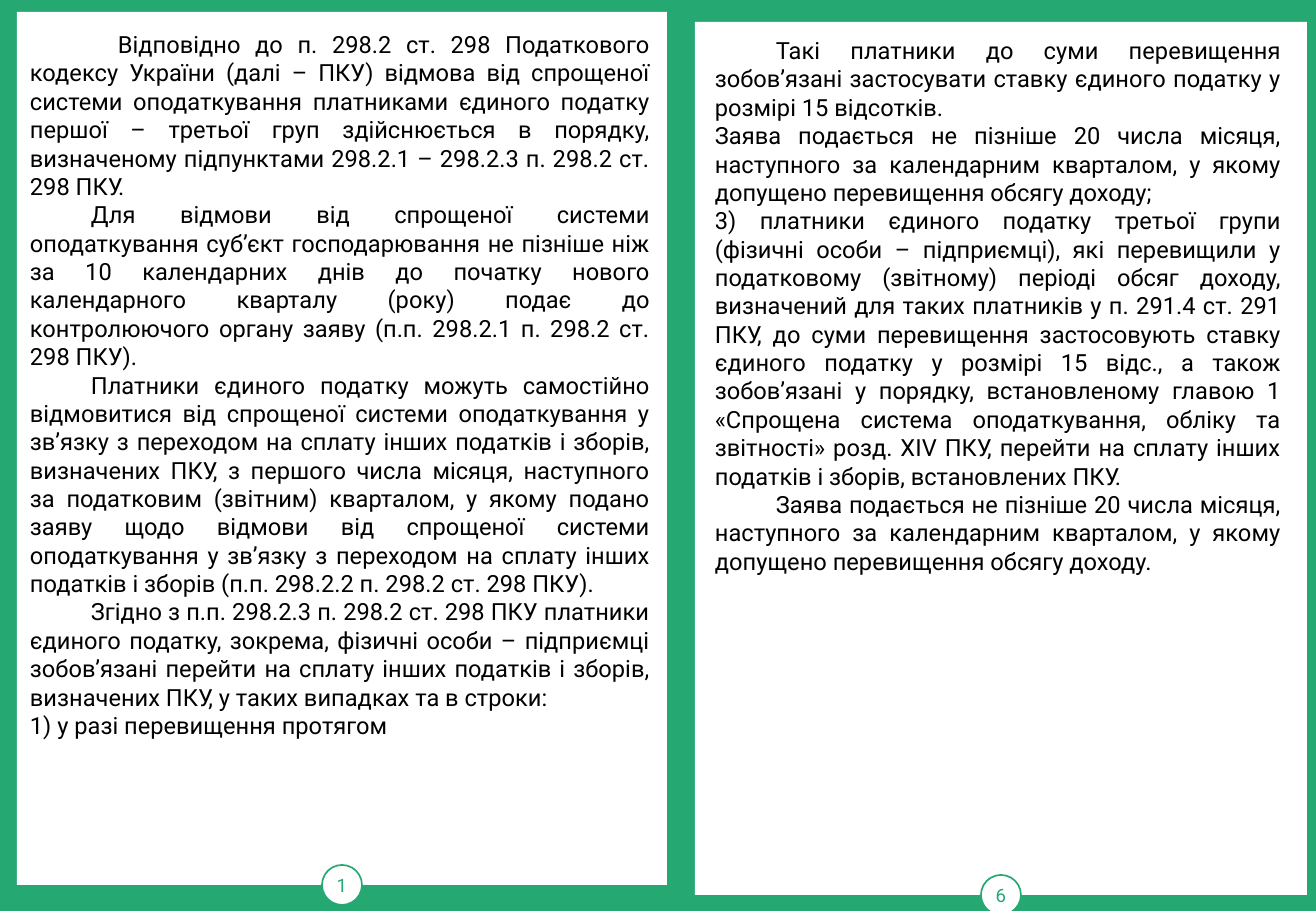
from pptx import Presentation
from pptx.dml.color import RGBColor
from pptx.enum.shapes import MSO_SHAPE
from pptx.enum.text import MSO_ANCHOR, PP_ALIGN
from pptx.util import Pt

EMU_PER_PX = 914400 / 121.5
GREEN = RGBColor(0x25, 0xA8, 0x72)
WHITE = RGBColor(0xFF, 0xFF, 0xFF)
BLACK = RGBColor(0x00, 0x00, 0x00)
RECTANGLE = MSO_SHAPE.RECTANGLE
OVAL = MSO_SHAPE.OVAL
MIDDLE = MSO_ANCHOR.MIDDLE
CENTER = PP_ALIGN.CENTER
JUSTIFY = PP_ALIGN.JUSTIFY

BADGE_SIZE = 40
FIRST_INDENT = 88
INDENT = 61

# Each paragraph is a first-line indent in px and its wording
REFUSAL_RULES = [
    (FIRST_INDENT, "Відповідно до п. 298.2 ст. 298 Податкового кодексу України (далі – ПКУ) "
     "відмова від спрощеної системи оподаткування платниками єдиного податку першої – третьої "
     "груп здійснюється в порядку, визначеному підпунктами 298.2.1 – 298.2.3 п. 298.2 ст. 298 ПКУ."),
    (INDENT, "Для відмови від спрощеної системи оподаткування суб’єкт господарювання не пізніше "
     "ніж за 10 календарних днів до початку нового календарного кварталу (року) подає до "
     "контролюючого органу заяву (п.п. 298.2.1 п. 298.2 ст. 298 ПКУ)."),
    (INDENT, "Платники єдиного податку можуть самостійно відмовитися від спрощеної системи "
     "оподаткування у зв’язку з переходом на сплату інших податків і зборів, визначених ПКУ, "
     "з першого числа місяця, наступного за податковим (звітним) кварталом, у якому подано заяву "
     "щодо відмови від спрощеної системи оподаткування у зв’язку з переходом на сплату інших "
     "податків і зборів (п.п. 298.2.2 п. 298.2 ст. 298 ПКУ)."),
    (INDENT, "Згідно з п.п. 298.2.3 п. 298.2 ст. 298 ПКУ платники єдиного податку, зокрема, "
     "фізичні особи – підприємці зобов’язані перейти на сплату інших податків і зборів, "
     "визначених ПКУ, у таких випадках та в строки:"),
    (0, "1) у разі перевищення протягом"),
]
EXCESS_RULES = [
    (INDENT, "Такі платники до суми перевищення зобов’язані застосувати ставку єдиного податку "
     "у розмірі 15 відсотків."),
    (0, "Заява подається не пізніше 20 числа місяця, наступного за календарним кварталом, "
     "у якому допущено перевищення обсягу доходу;"),
    (0, "3) платники єдиного податку третьої групи (фізичні особи – підприємці), які перевищили "
     "у податковому (звітному) періоді обсяг доходу, визначений для таких платників у п. 291.4 "
     "ст. 291 ПКУ, до суми перевищення застосовують ставку єдиного податку у розмірі 15 відс., "
     "а також зобов’язані у порядку, встановленому главою 1 «Спрощена система оподаткування, "
     "обліку та звітності» розд. XIV ПКУ, перейти на сплату інших податків і зборів, "
     "встановлених ПКУ."),
    (INDENT, "Заява подається не пізніше 20 числа місяця, наступного за календарним кварталом, "
     "у якому допущено перевищення обсягу доходу."),
]


def px(length):
    return round(length * EMU_PER_PX)


class Booklet:
    font = "Roboto"
    body_size = Pt(14)
    number_size = Pt(11)

    def __init__(self, slide):
        self.slide = slide
        slide.background.fill.solid()
        slide.background.fill.fore_color.rgb = GREEN

    def style(self, paragraph, size, color, alignment):
        paragraph.alignment = alignment
        for run in paragraph.runs:
            run.font.name = self.font
            run.font.size = size
            run.font.color.rgb = color

    def white_shape(self, kind, *box):
        shape = self.slide.shapes.add_shape(kind, *map(px, box))
        shape.shadow.inherit = False
        shape.fill.solid()
        shape.fill.fore_color.rgb = WHITE
        shape.line.fill.background()
        return shape

    def page(self, left, top, width, height, number):
        """Draw a sheet with its number badge centred on the bottom edge."""
        self.white_shape(RECTANGLE, left, top, width, height)
        badge = self.white_shape(OVAL, left + (width - BADGE_SIZE) // 2,
                                 top + height - BADGE_SIZE // 2, BADGE_SIZE, BADGE_SIZE)
        badge.line.color.rgb = GREEN
        badge.line.width = Pt(1)
        frame = badge.text_frame
        frame.margin_left = frame.margin_right = 0
        frame.vertical_anchor = MIDDLE
        frame.text = number
        self.style(frame.paragraphs[0], self.number_size, GREEN, CENTER)

    def prose(self, left, top, width, height, paragraphs):
        box = self.slide.shapes.add_textbox(*map(px, (left, top, width, height)))
        frame = box.text_frame
        frame.word_wrap = True
        frame.text = "\n".join(wording for _, wording in paragraphs)
        for paragraph, (indent, _) in zip(frame.paragraphs, paragraphs):
            self.style(paragraph, self.body_size, BLACK, JUSTIFY)
            properties = paragraph._p.get_or_add_pPr()
            properties.set("marL", "0")
            properties.set("indent", str(px(indent)))


def main():
    presentation = Presentation()
    presentation.slide_width = px(1316)
    presentation.slide_height = px(911)
    blank_layout = presentation.slide_layouts[6]
    booklet = Booklet(presentation.slides.add_slide(blank_layout))
    booklet.page(17, 12, 650, 873, "1")
    booklet.page(695, 22, 612, 873, "6")
    booklet.prose(18, 24, 644, 843, REFUSAL_RULES)
    booklet.prose(703, 30, 590, 700, EXCESS_RULES)
    presentation.save("out.pptx")


if __name__ == "__main__":
    main()
